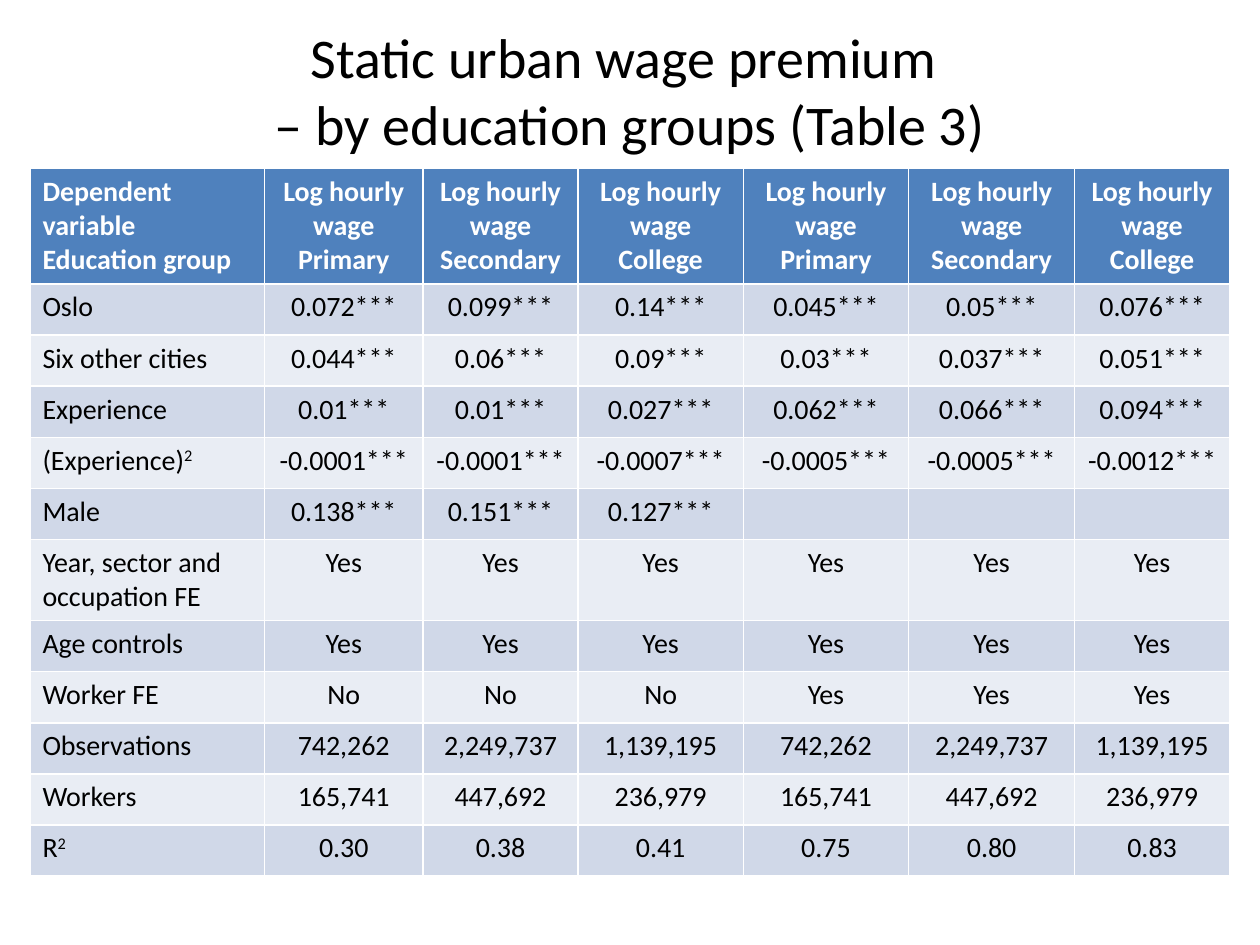
from dataclasses import dataclass

from pptx import Presentation
from pptx.dml.color import RGBColor as RGB
from pptx.enum.text import MSO_ANCHOR, PP_ALIGN
from pptx.util import Pt


@dataclass(frozen=True)
class Theme:
    font: str = "Calibri"
    title_size: int = 32
    table_size: int = 16
    text: str = "000000"
    header_text: str = "FFFFFF"
    header: str = "4F81BD"
    bands: tuple = ("E9EDF4", "D0D8E8")


theme = Theme()


def style(p, size, color, align, bold=False):
    p.alignment = align
    p.font.name, p.font.size, p.font.bold = theme.font, Pt(size), bold
    p.font.color.rgb = RGB.from_string(color)


prs = Presentation()
prs.slide_width, prs.slide_height = Pt(720), Pt(540)
s = prs.slides.add_slide(prs.slide_layouts[6])

# Table content; "^" marks a superscript ending
groups = ["Primary", "Secondary", "College"] * 2
rows = [
    ["Dependent variable\nEducation group"] + [f"Log hourly wage\n{g}" for g in groups],
    ["Oslo", "0.072***", "0.099***", "0.14***", "0.045***", "0.05***", "0.076***"],
    ["Six other cities", "0.044***", "0.06***", "0.09***", "0.03***", "0.037***", "0.051***"],
    ["Experience", "0.01***", "0.01***", "0.027***", "0.062***", "0.066***", "0.094***"],
    ["(Experience)^2", "-0.0001***", "-0.0001***", "-0.0007***",
     "-0.0005***", "-0.0005***", "-0.0012***"],
    ["Male", "0.138***", "0.151***", "0.127***", "", "", ""],
    ["Year, sector and occupation FE"] + ["Yes"] * 6,
    ["Age controls"] + ["Yes"] * 6,
    ["Worker FE"] + ["No"] * 3 + ["Yes"] * 3,
    ["Observations"] + ["742,262", "2,249,737", "1,139,195"] * 2,
    ["Workers"] + ["165,741", "447,692", "236,979"] * 2,
    ["R^2", "0.30", "0.38", "0.41", "0.75", "0.80", "0.83"],
]
col_widths = [134, 90.7, 88.5, 94.5, 94.5, 94.9, 88.5]
row_heights = [66] + [29.2] * 5 + [46.2] + [29.2] * 5

table = s.shapes.add_table(len(rows), len(col_widths), Pt(17.1), Pt(96.3),
                           Pt(sum(col_widths)), Pt(sum(row_heights))).table
for column, width in zip(table.columns, col_widths):
    column.width = Pt(width)

for i, (values, height) in enumerate(zip(rows, row_heights)):
    table.rows[i].height = Pt(height)
    is_header = i == 0
    fill = theme.header if is_header else theme.bands[i % 2]
    color = theme.header_text if is_header else theme.text
    for j, value in enumerate(values):
        cell = table.cell(i, j)
        cell.fill.solid()
        cell.fill.fore_color.rgb = RGB.from_string(fill)
        base, _, superscript = value.partition("^")
        tf = cell.text_frame
        tf.text = base
        if superscript:
            r = tf.paragraphs[0].add_run()
            r.text = superscript
            r._r.get_or_add_rPr().set("baseline", "30000")
        for p in tf.paragraphs:
            style(p, theme.table_size, color,
                  PP_ALIGN.CENTER if j else PP_ALIGN.LEFT, is_header)

# Title
tf = s.shapes.add_textbox(Pt(36.7), Pt(8.6), Pt(646.6), Pt(85)).text_frame
tf.word_wrap = True
tf.vertical_anchor = MSO_ANCHOR.MIDDLE
tf.text = "Static urban wage premium \n– by education groups (Table 3)"
for p in tf.paragraphs:
    style(p, theme.title_size, theme.text, PP_ALIGN.CENTER)

prs.save("out.pptx")
